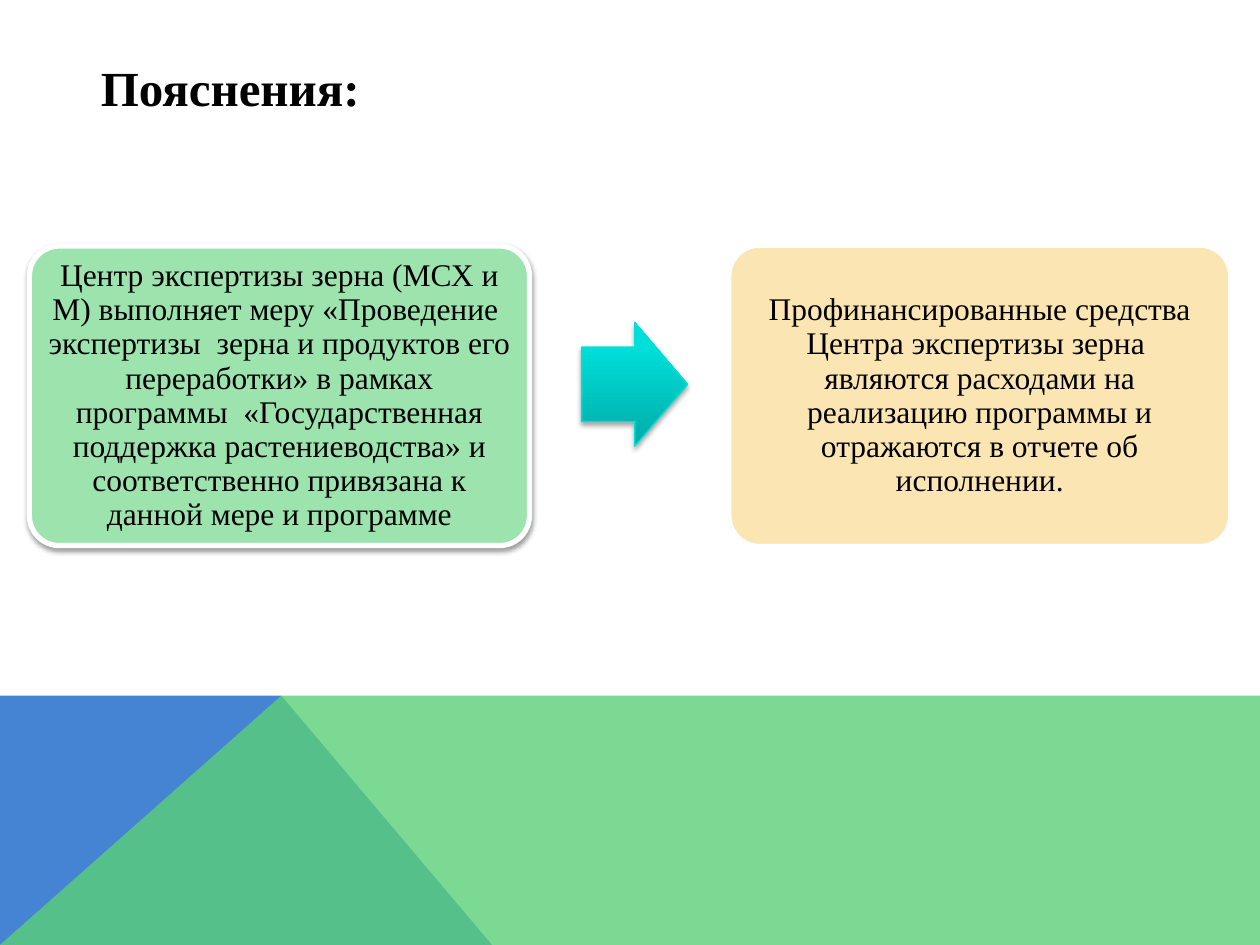
from dataclasses import dataclass
from typing import Optional

from lxml import etree
from pptx import Presentation
from pptx import util as u
from pptx.dml import color
from pptx.enum import shapes, text
from pptx.oxml import ns

FONT = "Times New Roman"
BLACK = "000000"
WHITE = "FFFFFF"
SLIDE_W, SLIDE_H = 720, 540
BAND_TOP, PEAK_X = 397.6, 160.8
CARD_TOP, CARD_W, CARD_H = 140.6, 285.8, 171.2


@dataclass
class Shadow:
    opacity: int
    blur: float
    distance: float


@dataclass
class Card:
    left: float
    fill: str
    border: float
    wording: str
    shadow: Optional[Shadow] = None


@dataclass
class Facet:
    points: list[tuple[float, float]]
    fill: str
    opacity: int = 100


def rgb(value: str) -> color.RGBColor:
    return color.RGBColor.from_string(value)


def add_child(parent, tag: str, **attributes):
    child = etree.SubElement(parent, ns.qn(tag))
    for key, value in attributes.items():
        child.set(key, str(value))
    return child


def paint(shape, fill: str, opacity: int = 100) -> None:
    shape.fill.solid()
    shape.fill.fore_color.rgb = rgb(fill)
    if opacity < 100:
        swatch = shape.fill._xPr.find(".//" + ns.qn("a:srgbClr"))
        add_child(swatch, "a:alpha", val=opacity * 1000)


def outline(shape, stroke: str, width: float) -> None:
    shape.line.color.rgb = rgb(stroke)
    shape.line.width = u.Pt(width)


def cast_shadow(shape, shadow: Optional[Shadow]) -> None:
    shape.shadow.inherit = False
    if shadow is None:
        return
    effects = shape._element.spPr.find(ns.qn("a:effectLst"))
    outer = add_child(effects, "a:outerShdw", blurRad=u.Pt(shadow.blur),
                      dist=u.Pt(shadow.distance), dir=90 * 60000, rotWithShape=0)
    swatch = add_child(outer, "a:srgbClr", val=BLACK)
    add_child(swatch, "a:alpha", val=shadow.opacity * 1000)


def write(frame, wording: str, size: float, bold: bool = False) -> None:
    frame.text = wording
    frame.word_wrap = True
    frame.vertical_anchor = text.MSO_ANCHOR.MIDDLE
    font = frame.paragraphs[0].runs[0].font
    font.name, font.size, font.bold = FONT, u.Pt(size), bold
    font.color.rgb = rgb(BLACK)


def draw_facet(slide, facet: Facet) -> None:
    start, *rest = [(u.Pt(x), u.Pt(y)) for x, y in facet.points]
    builder = slide.shapes.build_freeform(*start)
    builder.add_line_segments(rest, close=True)
    shape = builder.convert_to_shape()
    shape.shadow.inherit = False
    paint(shape, facet.fill, facet.opacity)
    shape.line.fill.background()


def draw_card(slide, card: Card) -> None:
    shape = slide.shapes.add_shape(
        shapes.MSO_SHAPE.ROUNDED_RECTANGLE,
        u.Pt(card.left), u.Pt(CARD_TOP), u.Pt(CARD_W), u.Pt(CARD_H))
    shape.adjustments[0] = 0.1
    paint(shape, card.fill)
    outline(shape, WHITE, card.border)
    cast_shadow(shape, card.shadow)
    frame = shape.text_frame
    frame.margin_left = frame.margin_right = u.Pt(5.4)
    frame.margin_top = frame.margin_bottom = u.Pt(5.4)
    write(frame, card.wording, 18)
    paragraph = frame.paragraphs[0]
    paragraph.alignment = text.PP_ALIGN.CENTER
    paragraph.line_spacing = 0.9


def draw_arrow(slide) -> None:
    arrow = slide.shapes.add_shape(shapes.MSO_SHAPE.RIGHT_ARROW, u.Pt(332.4),
                                   u.Pt(184.2), u.Pt(60.6), u.Pt(70.8))
    arrow.adjustments[0], arrow.adjustments[1] = 0.6, 0.5
    arrow.fill.gradient()
    arrow.fill.gradient_angle = 90
    stops = arrow._element.spPr.find(".//" + ns.qn("a:gsLst"))
    for stop in list(stops):
        stops.remove(stop)
    for position, tint in ((0, "00ABA7"), (80, "00DED9"), (100, "00DFDA")):
        stop = add_child(stops, "a:gs", pos=position * 1000)
        add_child(stop, "a:srgbClr", val=tint)
    outline(arrow, "00E0DB", 0.75)
    cast_shadow(arrow, Shadow(35, 3.1, 1.8))


FACETS = [
    Facet([(0, SLIDE_H), (0, BAND_TOP), (PEAK_X, BAND_TOP), (281.2, SLIDE_H)],
          "4584D3"),
    Facet([(0, SLIDE_H), (PEAK_X, BAND_TOP), (SLIDE_W, BAND_TOP),
           (SLIDE_W, SLIDE_H)], "5BD078", 80),
]

CARDS = [
    Card(16.8, "9DE3AE", 3,
         "Центр экспертизы зерна (МСХ и М) выполняет меру «Проведение  "
         "экспертизы  зерна и продуктов его переработки» в рамках программы  "
         "«Государственная поддержка растениеводства» и соответственно "
         "привязана к данной мере и программе", Shadow(38, 3.1, 1.6)),
    Card(417, "FBE6B3", 2,
         "Профинансированные средства Центра экспертизы зерна  являются "
         "расходами на реализацию программы и отражаются в отчете об "
         "исполнении."),
]


def main() -> None:
    deck = Presentation()
    deck.slide_width, deck.slide_height = u.Pt(SLIDE_W), u.Pt(SLIDE_H)
    slide = deck.slides.add_slide(deck.slide_layouts[5])

    heading = slide.shapes.title
    heading.left, heading.top = u.Pt(50.4), u.Pt(28)
    heading.width, heading.height = u.Pt(592), u.Pt(43.2)
    write(heading.text_frame, "Пояснения:", 28, bold=True)
    heading.text_frame.paragraphs[0].alignment = text.PP_ALIGN.LEFT

    for facet in FACETS:
        draw_facet(slide, facet)
    left_card, right_card = CARDS
    draw_card(slide, left_card)
    draw_arrow(slide)
    draw_card(slide, right_card)
    deck.save("out.pptx")


if __name__ == "__main__":
    main()
